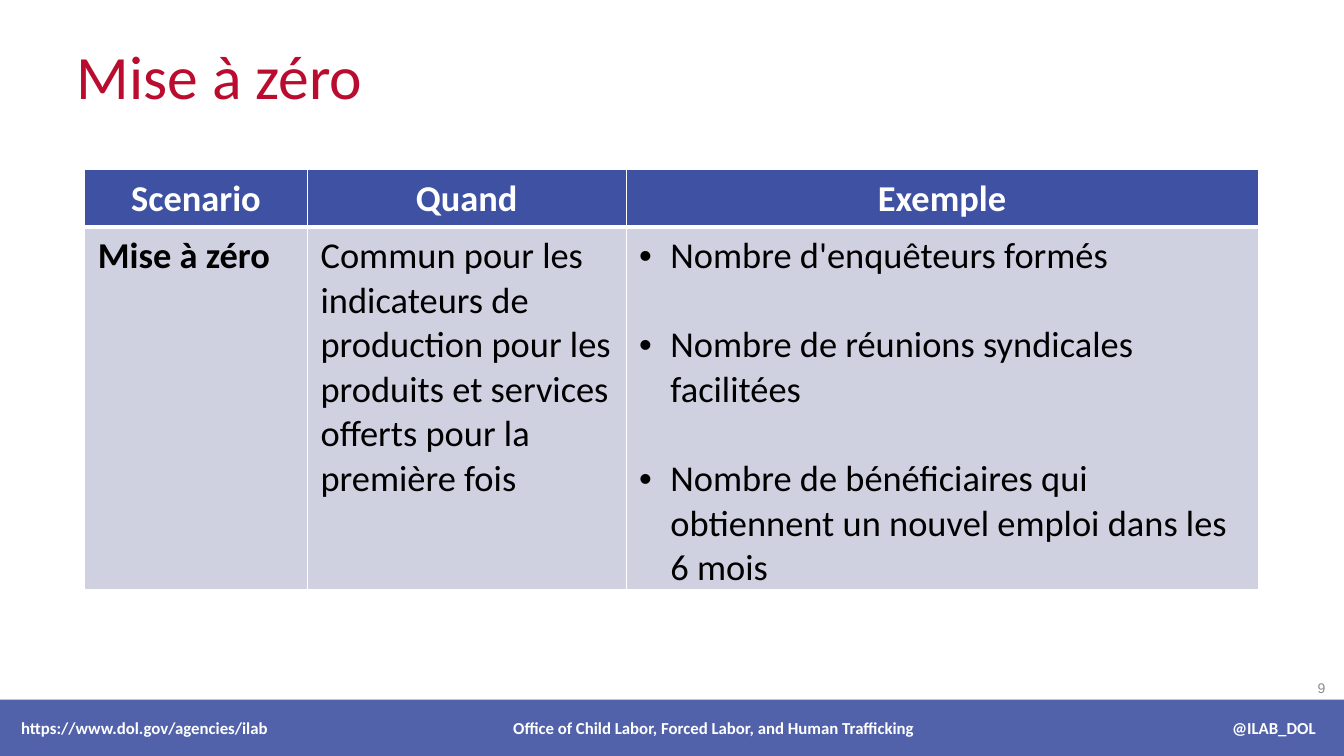
from pptx import Presentation
from pptx.dml.color import RGBColor
from pptx.enum.shapes import MSO_SHAPE as Shape
from pptx.enum.text import MSO_ANCHOR as Anchor, MSO_AUTO_SIZE as AutoSize, PP_ALIGN as Align
from pptx.oxml.ns import qn
from pptx.util import Inches, Pt
from lxml.etree import SubElement

RED = RGBColor(0xBA, 0x0C, 0x2F)
BLUE = RGBColor(0x3F, 0x51, 0xA2)
LAVENDER = RGBColor(0xCF, 0xD0, 0xE0)
GREY = RGBColor(0x8C, 0x8C, 0x8C)
WHITE = RGBColor(0xFF, 0xFF, 0xFF)
BLACK = RGBColor(0, 0, 0)

HEADINGS = ["Scenario", "Quand", "Exemple"]
SCENARIO = [
    ["Mise à zéro"],
    ["Commun pour les indicateurs de production pour les produits et services "
     "offerts pour la première fois"],
    ["Nombre d'enquêteurs formés",
     "Nombre de réunions syndicales facilitées",
     "Nombre de bénéficiaires qui obtiennent un nouvel emploi dans les 6 mois"],
]
FOOTER = ["https://www.dol.gov/agencies/ilab",
          "Office of Child Labor, Forced Labor, and Human Trafficking",
          "@ILAB_DOL"]


class SlideBuilder:
    font_name = "Calibri"
    table_size = 26

    def __init__(self, deck):
        self.page = deck.slides.add_slide(deck.slide_layouts[5])

    def style(self, para, size, color, bold=False, align=Align.LEFT, font_name=None):
        para.alignment = align
        para.font.name = font_name or self.font_name
        para.font.size = Pt(size)
        para.font.bold = bold
        para.font.color.rgb = color

    def margins(self, holder, left=0.13, top=0.07, right=0.13, bottom=0.07):
        holder.margin_left, holder.margin_right = Inches(left), Inches(right)
        holder.margin_top, holder.margin_bottom = Inches(top), Inches(bottom)

    def title(self, text, left, top, width, height):
        title = self.page.shapes.title
        title.left, title.top = Inches(left), Inches(top)
        title.width, title.height = Inches(width), Inches(height)
        frame = title.text_frame
        frame.text = text
        frame.word_wrap = True
        frame.auto_size = AutoSize.NONE
        frame.vertical_anchor = Anchor.BOTTOM
        self.margins(frame)
        self.style(frame.paragraphs[0], 44, RED)

    def page_number(self, text, left, top, width, height):
        box = self.page.shapes.add_textbox(
            Inches(left), Inches(top), Inches(width), Inches(height))
        frame = box.text_frame
        frame.text = text
        frame.word_wrap = True
        frame.vertical_anchor = Anchor.MIDDLE
        self.style(frame.paragraphs[0], 10, GREY, font_name="Arial")

    def borders(self, cell, bottom):
        properties = cell._tc.get_or_add_tcPr()
        for index, (side, width) in enumerate(
                [("lnL", 1), ("lnR", 1), ("lnT", 1), ("lnB", bottom)]):
            line = SubElement(properties, qn("a:" + side), w=str(Pt(width)))
            fill = SubElement(line, qn("a:solidFill"))
            SubElement(fill, qn("a:srgbClr"), val=str(WHITE))
            properties.remove(line)
            properties.insert(index, line)

    def bullet(self, para):
        properties = para._p.get_or_add_pPr()
        properties.set("marL", str(Inches(0.31)))
        properties.set("indent", str(Inches(-0.31)))
        font = SubElement(properties, qn("a:buFont"), typeface="Arial")
        mark = SubElement(properties, qn("a:buChar"), char="•")
        properties.find(qn("a:defRPr")).addprevious(font)
        font.addnext(mark)

    def cell(self, cell, texts, fill, color, bold, align, bottom_line):
        cell.fill.solid()
        cell.fill.fore_color.rgb = fill
        self.borders(cell, bottom_line)
        cell.text = "\n".join(texts)
        for index, para in enumerate(cell.text_frame.paragraphs):
            self.style(para, self.table_size, color, bold, align)
            if index:
                para.space_before = Pt(31.8)
            if len(texts) > 1:
                self.bullet(para)

    def table(self, left, top, widths, heights):
        table = self.page.shapes.add_table(
            2, len(widths), Inches(left), Inches(top),
            Inches(sum(widths)), Inches(sum(heights))).table
        table.horz_banding = False
        for column, width in zip(table.columns, widths):
            column.width = Inches(width)
        for row, height in zip(table.rows, heights):
            row.height = Inches(height)
        for index, (heading, texts) in enumerate(zip(HEADINGS, SCENARIO)):
            head, body = table.cell(0, index), table.cell(1, index)
            self.margins(head)
            self.margins(body, bottom=0)
            self.cell(head, [heading], BLUE, WHITE, True, Align.CENTER, 3)
            self.cell(body, texts, LAVENDER, BLACK, index == 0, Align.LEFT, 1)

    def footer(self, texts, left, top, width, height):
        bar = self.page.shapes.add_shape(
            Shape.RECTANGLE, Inches(left), Inches(top), Inches(width), Inches(height))
        bar.shadow.inherit = False
        bar.line.fill.background()
        bar.fill.solid()
        bar.fill.fore_color.rgb = BLUE
        color = bar._element.spPr.find(qn("a:solidFill"))[0]
        SubElement(color, qn("a:alpha"), val="90000")
        frame = bar.text_frame
        frame.word_wrap = True
        frame.vertical_anchor = Anchor.MIDDLE
        self.margins(frame, left=0.21)
        frame.text = "\t".join(texts)
        para = frame.paragraphs[0]
        self.style(para, 12, WHITE, True)
        properties = para._p.get_or_add_pPr()
        tabs = SubElement(properties, qn("a:tabLst"))
        for position, align in [(6.87, "ctr"), (12.84, "r")]:
            SubElement(tabs, qn("a:tab"), pos=str(Inches(position)), algn=align)
        properties.find(qn("a:defRPr")).addprevious(tabs)


def main():
    deck = Presentation()
    deck.slide_width, deck.slide_height = Inches(13.33), Inches(7.5)
    slide = SlideBuilder(deck)
    slide.page_number("9", 12.97, 6.62, 0.36, 0.4)
    slide.title("Mise à zéro", 0.63, 0.31, 11.64, 0.87)
    slide.table(0.84, 1.68, [2.21, 3.16, 6.27], [0.57, 3.6])
    slide.footer(FOOTER, 0, 6.94, 13.33, 0.56)
    deck.save("out.pptx")


if __name__ == "__main__":
    main()
